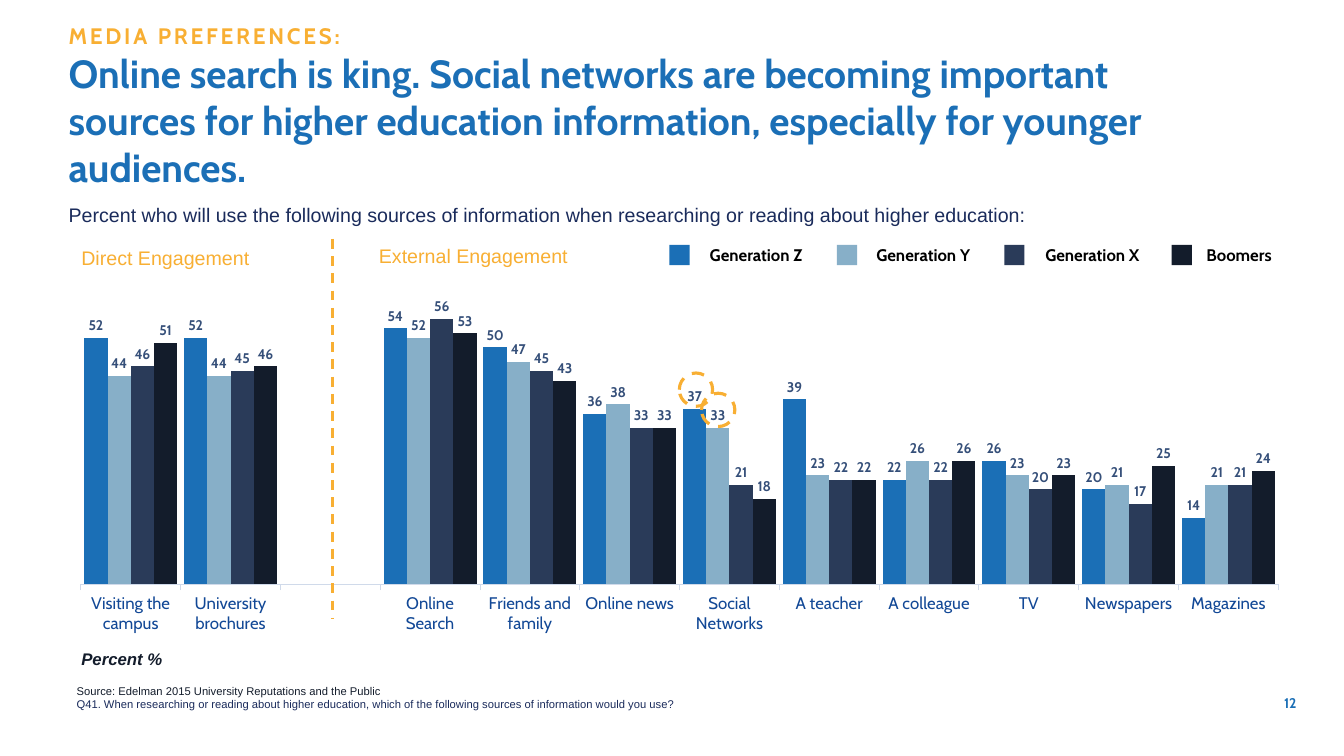
from copy import deepcopy

from lxml import etree
from pptx import Presentation
from pptx.chart.data import CategoryChartData
from pptx.dml.color import RGBColor
from pptx.enum.chart import XL_CHART_TYPE, XL_LABEL_POSITION, XL_TICK_MARK
from pptx.enum.dml import MSO_LINE
from pptx.enum.shapes import MSO_CONNECTOR, MSO_SHAPE
from pptx.enum.text import MSO_ANCHOR, MSO_AUTO_SIZE, PP_ALIGN
from pptx.oxml import parse_xml
from pptx.oxml.ns import nsdecls, qn
from pptx.util import Cm, Pt

COLUMNS = XL_CHART_TYPE.COLUMN_CLUSTERED
OUTSIDE_END = XL_LABEL_POSITION.OUTSIDE_END
TICK_OUTSIDE = XL_TICK_MARK.OUTSIDE
DASH = MSO_LINE.DASH
STRAIGHT = MSO_CONNECTOR.STRAIGHT
RECTANGLE, OVAL = MSO_SHAPE.RECTANGLE, MSO_SHAPE.OVAL
TOP, BOTTOM = MSO_ANCHOR.TOP, MSO_ANCHOR.BOTTOM
LEFT, RIGHT = PP_ALIGN.LEFT, PP_ALIGN.RIGHT
FIT_SHAPE, FIXED = MSO_AUTO_SIZE.SHAPE_TO_FIT_TEXT, MSO_AUTO_SIZE.NONE

COLORS = {
    "blue": "1B6FB6",
    "light blue": "87AFC8",
    "slate": "2A3B59",
    "ink": "131C2B",
    "navy": "1A2B5B",
    "orange": "F8AF33",
    "value": "354F79",
    "category": "124896",
    "axis": "D0DAEA",
    "black": "000000",
}

CATEGORIES = ["Visiting the campus", "University brochures", "", "Online Search",
              "Friends and family", "Online news", "Social Networks", "A teacher",
              "A colleague", "TV", "Newspapers", "Magazines"]

# Generation, colour, right edge of the legend label from its swatch, values
GENERATIONS = [
    ("Generation Z", "blue", 3.61, [52, 52, None, 54, 50, 36, 37, 39, 22, 26, 20, 14]),
    ("Generation Y", "light blue", 3.61, [44, 44, None, 52, 47, 38, 33, 23, 26, 23, 21, 21]),
    ("Generation X", "slate", 3.66, [46, 45, None, 56, 45, 33, 21, 22, 22, 20, 17, 21]),
    ("Boomers", "ink", 2.77, [51, 46, None, 53, 43, 33, 18, 22, 26, 23, 25, 24]),
]


def rgb(name):
    return RGBColor.from_string(COLORS[name])


def format_font(font, size, color, name="Arial", bold=False, italic=False):
    font.size = Pt(size)
    font.color.rgb = rgb(color)
    font.name = name
    font.bold = bold
    font.italic = italic


def add_text(shapes, box, text, align=LEFT, anchor=TOP, inset=True, wrap=True,
             grow=True, **font_format):
    """Write each line of the text as a paragraph and return the text frame."""
    frame = shapes.add_textbox(*map(Cm, box)).text_frame
    frame.word_wrap = wrap
    frame.auto_size = FIT_SHAPE if grow else FIXED
    frame.vertical_anchor = anchor
    if not inset:
        frame.margin_left = frame.margin_right = 0
        frame.margin_top = frame.margin_bottom = 0
    frame.text = text
    for paragraph in frame.paragraphs:
        paragraph.alignment = align
        format_font(paragraph.runs[0].font, **font_format)
    return frame


def add_title(shapes, kicker, headline):
    frame = add_text(shapes, (1.73, 2.92, 29.49, 1.88), kicker, anchor=BOTTOM,
                     inset=False, grow=False, size=16, color="orange",
                     name="Cabin", bold=True)
    paragraph = frame.paragraphs[0]
    kicker_properties = paragraph.runs[0].font._element
    kicker_properties.set("spc", "200")
    # The line break takes the size of the kicker
    paragraph.add_line_break()
    paragraph._p.find(qn("a:br")).append(deepcopy(kicker_properties))
    run = paragraph.add_run()
    run.text = headline
    format_font(run.font, size=28, color="blue", name="Cabin", bold=True)


def add_swatch(shapes, left, top, size, color):
    shape = shapes.add_shape(RECTANGLE, *map(Cm, (left, top, size, size)))
    shape.shadow.inherit = False
    shape.fill.solid()
    shape.fill.fore_color.rgb = rgb(color)
    shape.line.fill.background()


def style_dashes(line, width):
    line.color.rgb = rgb("orange")
    line.width = Pt(width)
    line.dash_style = DASH


def add_highlight(shapes, left, top, size=0.84):
    shape = shapes.add_shape(OVAL, *map(Cm, (left, top, size, size)))
    shape.shadow.inherit = False
    shape.fill.background()
    style_dashes(shape.line, 2.25)


def add_divider(shapes, x, top, bottom):
    connector = shapes.add_connector(STRAIGHT, *map(Cm, (x, top, x, bottom)))
    style_dashes(connector.line, 1.75)
    etree.SubElement(connector._element.spPr, qn("a:effectLst"))


def add_legend(shapes, left=16.87, step=4.22, swatch=0.51):
    group = shapes.add_group_shape()
    for index, (label, color, right, _) in enumerate(GENERATIONS):
        x = left + index * step
        add_swatch(group.shapes, x, 6.17, swatch, color)
        add_text(group.shapes, (x + 0.25, 6.05, right - 0.25, 0.76), label,
                 align=RIGHT, size=12, color="black", name="Cabin", bold=True)


def set_plot_layout(chart, x, y, width, height):
    settings = {"layoutTarget": "inner", "xMode": "edge", "yMode": "edge",
                "x": x, "y": y, "w": width, "h": height}
    items = "".join(f'<c:{tag} val="{value}"/>' for tag, value in settings.items())
    plot_area = chart._chartSpace.chart.plotArea
    for layout in plot_area.findall(qn("c:layout")):
        plot_area.remove(layout)
    plot_area.insert(0, parse_xml(
        f'<c:layout {nsdecls("c")}><c:manualLayout>{items}</c:manualLayout></c:layout>'))


def add_source_chart(shapes):
    data = CategoryChartData(number_format="0")
    data.categories = CATEGORIES
    for label, _, _, values in GENERATIONS:
        data.add_series(label, values)
    box = map(Cm, (1.07, 7.04, 31.24, 11.1))
    chart = shapes.add_chart(COLUMNS, *box, data).chart
    chart.has_legend = False
    chart.has_title = False
    format_font(chart.font, size=10, color="ink")
    set_plot_layout(chart, 0.031, 0.047, 0.966, 0.645)

    # Axes
    value_axis = chart.value_axis
    value_axis.minimum_scale, value_axis.maximum_scale = 0, 60
    value_axis.has_major_gridlines = False
    value_axis.visible = False
    category_axis = chart.category_axis
    category_axis.major_tick_mark = TICK_OUTSIDE
    category_axis.format.line.color.rgb = rgb("axis")
    category_axis.format.line.width = Pt(0.75)
    format_font(category_axis.tick_labels.font, size=12, color="category", name="Cabin")

    # Columns and their values
    plot = chart.plots[0]
    plot.gap_width = 30
    plot.overlap = 0
    plot.vary_by_categories = False
    for series, (_, color, _, _) in zip(plot.series, GENERATIONS):
        series.format.fill.solid()
        series.format.fill.fore_color.rgb = rgb(color)
        labels = series.data_labels
        labels.show_value = True
        labels.position = OUTSIDE_END
        labels.number_format = "0"
        labels.number_format_is_linked = False
        format_font(labels.font, size=10, color="value", name="Cabin", bold=True)


def main():
    presentation = Presentation()
    presentation.slide_width, presentation.slide_height = Cm(33.87), Cm(19.05)
    shapes = presentation.slides.add_slide(presentation.slide_layouts[6]).shapes

    add_source_chart(shapes)

    # Source note
    note = add_text(shapes, (1.68, 17.12, 19.89, 0.94),
                    "Source: Edelman 2015 University Reputations and the Public\n"
                    "Q41. When researching or reading about higher education, which of the "
                    "following sources of information would you use?", size=8, color="ink")
    note.paragraphs[1].runs[0].font.color.rgb = rgb("navy")

    # Heading
    add_title(shapes, "MEDIA PREFERENCES:",
              "Online search is king. Social networks are becoming important sources for "
              "higher education information, especially for younger audiences.")
    add_text(shapes, (1.73, 5.11, 30.38, 1.04),
             "Percent who will use the following sources of information when researching "
             "or reading about higher education:",
             inset=False, grow=False, size=14, color="navy")

    # Chart annotations
    add_text(shapes, (1.8, 16.21, 2.69, 0.76), "Percent %", wrap=False,
             size=12, color="ink", bold=True, italic=True)
    add_highlight(shapes, 17.68, 9.91)
    add_legend(shapes)
    add_highlight(shapes, 17.12, 9.4)
    add_divider(shapes, 8.38, 6.02, 15.6)
    add_text(shapes, (1.8, 6.07, 4.98, 0.86), "Direct Engagement", size=14, color="orange")
    add_text(shapes, (9.3, 6.02, 6.32, 0.86), "External Engagement", size=14, color="orange")

    # Page number
    add_text(shapes, (32.11, 17.37, 1.7, 1.02), "12", grow=False,
             size=10, color="blue", name="Cabin", bold=True)

    presentation.save("out.pptx")


if __name__ == "__main__":
    main()
